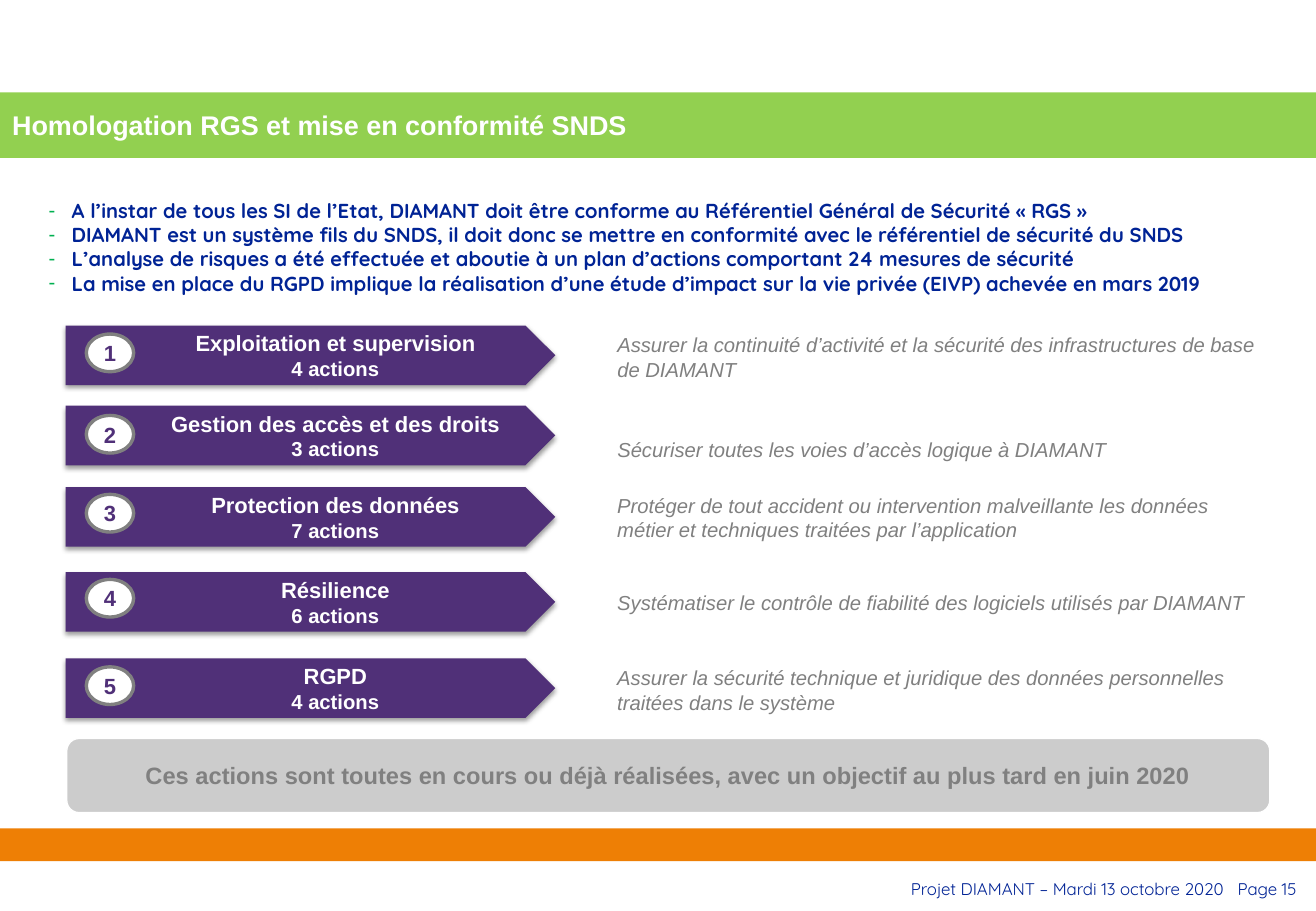
import dataclasses

import lxml.etree
import pptx
import pptx.dml.color
import pptx.enum.shapes
import pptx.enum.text
import pptx.oxml.ns
import pptx.util

Inches = pptx.util.Inches
Pt = pptx.util.Pt
Align = pptx.enum.text.PP_ALIGN
Anchor = pptx.enum.text.MSO_ANCHOR
Shape = pptx.enum.shapes.MSO_SHAPE
qn = pptx.oxml.ns.qn


@dataclasses.dataclass(frozen=True)
class Theme:
    white: str = "FFFFFF"
    green: str = "92D050"
    dash: str = "00B050"
    navy: str = "002395"
    purple: str = "503078"
    gray: str = "808080"
    light_gray: str = "CCCCCC"
    orange: str = "EE7F05"
    shadow: str = "000000"
    sans: str = "Arial"
    rounded: str = "Quicksand"
    title_size: int = 16
    conclusion_size: int = 14
    label_size: int = 13
    text_size: int = 12
    footer_size: int = 10


@dataclasses.dataclass(frozen=True)
class Box:
    left: float
    top: float
    width: float
    height: float

    def inner(self, left, top, width, height):
        return Box(self.left + left, self.top + top, width, height)

    def lengths(self):
        return [Inches(value) for value in dataclasses.astuple(self)]


@dataclasses.dataclass(frozen=True)
class Action:
    name: str
    count: str
    goal: str
    top: float
    badge_offset: float
    goal_offset: float
    goal_width: float


THEME = Theme()
SLIDE_WIDTH = 10.83

REQUIREMENTS = [
    "A l’instar de tous les SI de l’Etat, DIAMANT doit être conforme au Référentiel Général de Sécurité « RGS »",
    "DIAMANT est un système fils du SNDS, il doit donc se mettre en conformité avec le référentiel de sécurité du SNDS",
    "L’analyse de risques a été effectuée et aboutie à un plan d’actions comportant 24 mesures de sécurité",
    "La mise en place du RGPD implique la réalisation d’une étude d’impact sur la vie privée (EIVP) achevée en mars 2019",
]
ACTIONS = [
    Action("Exploitation et supervision", "4 actions",
           "Assurer la continuité d’activité et la sécurité des infrastructures de base de DIAMANT",
           2.68, 0.07, -0.02, 5.61),
    Action("Gestion des accès et des droits", "3 actions",
           "Sécuriser toutes les voies d’accès logique à DIAMANT",
           3.34, 0.08, 0.08, 5.55),
    Action("Protection des données", "7 actions",
           "Protéger de tout accident ou intervention malveillante les données métier et techniques traitées par l’application",
           4.01, 0.06, -0.03, 5.43),
    Action("Résilience", "6 actions",
           "Systématiser le contrôle de fiabilité des logiciels utilisés par DIAMANT",
           4.71, 0.06, -0.03, 5.43),
    Action("RGPD", "4 actions",
           "Assurer la sécurité technique et juridique des données personnelles traitées dans le système",
           5.42, 0.07, -0.02, 5.43),
]


def rgb(color):
    return pptx.dml.color.RGBColor.from_string(color)


def set_box(shape, box):
    shape.left, shape.top, shape.width, shape.height = box.lengths()


def set_frame(shape, margins, anchor=Anchor.MIDDLE):
    frame = shape.text_frame
    frame.word_wrap = True
    frame.auto_size = pptx.enum.text.MSO_AUTO_SIZE.NONE
    frame.vertical_anchor = anchor
    frame.margin_left, frame.margin_top, frame.margin_right, frame.margin_bottom = map(Inches, margins)
    return frame


def style(paragraph, size, color, font=THEME.sans, align=Align.LEFT, bold=False, italic=False):
    paragraph.alignment = align
    paragraph.font.name = font
    paragraph.font.size = Pt(size)
    paragraph.font.color.rgb = rgb(color)
    paragraph.font.bold = bold
    paragraph.font.italic = italic


def add_panel(slide, kind, box, fill, line=None, line_width=0):
    shape = slide.shapes.add_shape(kind, *box.lengths())
    shape.shadow.inherit = False
    shape.fill.solid()
    shape.fill.fore_color.rgb = rgb(fill)
    if line:
        shape.line.color.rgb = rgb(line)
        shape.line.width = Pt(line_width)
    else:
        shape.line.fill.background()
    return shape


def add_drop_shadow(shape):
    effects = shape._element.spPr.find(qn("a:effectLst"))
    outer = lxml.etree.SubElement(effects, qn("a:outerShdw"), blurRad=str(Pt(3.1)),
                                  dist=str(Pt(1.6)), dir="5400000", rotWithShape="0")
    color = lxml.etree.SubElement(outer, qn("a:srgbClr"), val=THEME.shadow)
    lxml.etree.SubElement(color, qn("a:alpha"), val="38000")


def add_dash(paragraph):
    properties = paragraph._p.get_or_add_pPr()
    properties.set("marL", str(Inches(0.19)))
    properties.set("indent", str(Inches(-0.19)))
    color = lxml.etree.SubElement(properties, qn("a:buClr"))
    lxml.etree.SubElement(color, qn("a:srgbClr"), val=THEME.dash)
    lxml.etree.SubElement(properties, qn("a:buChar"), char="-")


def fill_title(slide, box):
    title = slide.shapes.title
    set_box(title, box)
    title.fill.solid()
    title.fill.fore_color.rgb = rgb(THEME.green)
    frame = set_frame(title, (0.1, 0.05, 0.1, 0.05))
    frame.text = "Homologation RGS et mise en conformité SNDS"
    style(frame.paragraphs[0], THEME.title_size, THEME.white, bold=True)


def fill_requirements(slide, box):
    body = slide.placeholders[1]
    set_box(body, box)
    frame = set_frame(body, (0.1, 0.05, 0.1, 0.05), Anchor.TOP)
    frame.text = "\n".join(REQUIREMENTS)
    for paragraph in frame.paragraphs:
        paragraph.space_before = Pt(0)
        add_dash(paragraph)
        style(paragraph, THEME.text_size, THEME.navy, THEME.rounded, bold=True)


def add_action(slide, box, number, action):
    arrow = add_panel(slide, Shape.PENTAGON, box.inner(0, 0, 4.03, box.height), THEME.purple)
    add_drop_shadow(arrow)
    frame = set_frame(arrow, (0.63, 0, 0.1, 0))
    frame.text = f"{action.name}\n{action.count}"
    for paragraph, size in zip(frame.paragraphs, (THEME.label_size, THEME.text_size)):
        style(paragraph, size, THEME.white, align=Align.CENTER, bold=True)

    badge = add_panel(slide, Shape.OVAL, box.inner(0.17, action.badge_offset, 0.39, 0.31),
                      THEME.white, THEME.gray, 2)
    frame = set_frame(badge, (0, 0, 0, 0))
    frame.text = str(number)
    style(frame.paragraphs[0], THEME.label_size, THEME.purple, align=Align.CENTER, bold=True)

    goal = add_panel(slide, Shape.RECTANGLE,
                     box.inner(4.42, action.goal_offset, action.goal_width, 0.56), THEME.white)
    frame = set_frame(goal, (0.12, 0.08, 0.12, 0.08))
    frame.text = action.goal
    style(frame.paragraphs[0], THEME.text_size, THEME.gray, italic=True)


def add_conclusion(slide, box):
    panel = add_panel(slide, Shape.ROUNDED_RECTANGLE, box, THEME.light_gray, THEME.white, 0.75)
    frame = set_frame(panel, (0.12, 0.08, 0.12, 0.08))
    frame.text = "Ces actions sont toutes en cours ou déjà réalisées, avec un objectif au plus tard en juin 2020"
    style(frame.paragraphs[0], THEME.conclusion_size, THEME.gray, align=Align.CENTER, bold=True)


def add_footer(slide, box):
    add_panel(slide, Shape.RECTANGLE, box.inner(0, 0, box.width, 0.27), THEME.orange)
    for text, left, width in (("Projet DIAMANT – Mardi 13 octobre 2020", 5.5, 4.57), ("Page 15", 10.1, 0.57)):
        label = slide.shapes.add_textbox(*box.inner(left, 0.35, width, 0.3).lengths())
        frame = set_frame(label, (0, 0, 0, 0))
        frame.text = text
        style(frame.paragraphs[0], THEME.footer_size, THEME.navy, THEME.rounded, Align.RIGHT)


def main():
    presentation = pptx.Presentation()
    presentation.slide_width = Inches(SLIDE_WIDTH)
    presentation.slide_height = Inches(7.5)
    slide = presentation.slides.add_slide(presentation.slide_layouts[1])
    fill_title(slide, Box(0, 0.76, SLIDE_WIDTH, 0.54))
    fill_requirements(slide, Box(0.3, 1.58, 10.21, 0.91))
    for number, action in enumerate(ACTIONS, 1):
        add_action(slide, Box(0.54, action.top, 10.03, 0.49), number, action)
    add_conclusion(slide, Box(0.55, 6.08, 9.9, 0.61))
    add_footer(slide, Box(0, 6.82, SLIDE_WIDTH, 0.68))
    presentation.save("out.pptx")


if __name__ == "__main__":
    main()
